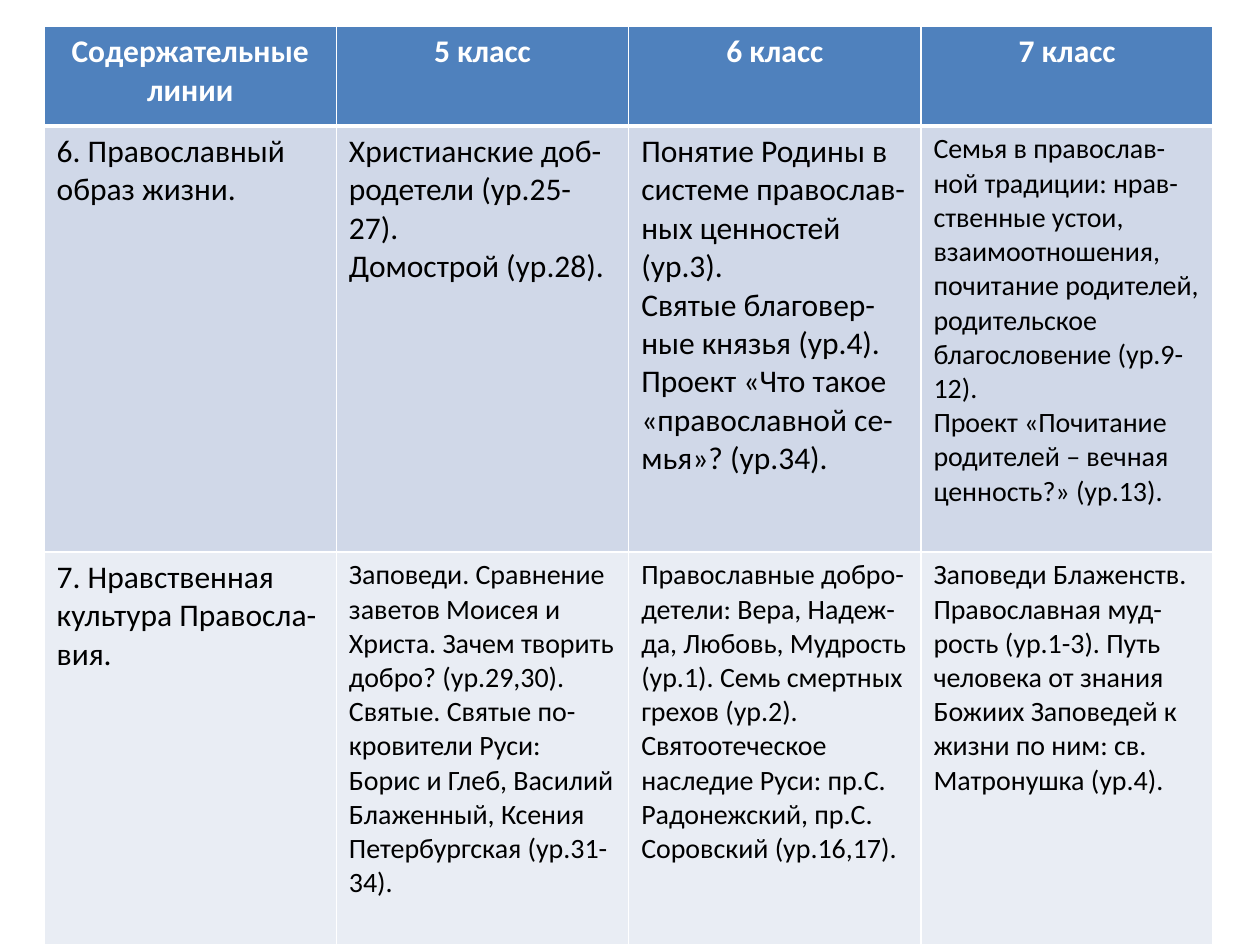
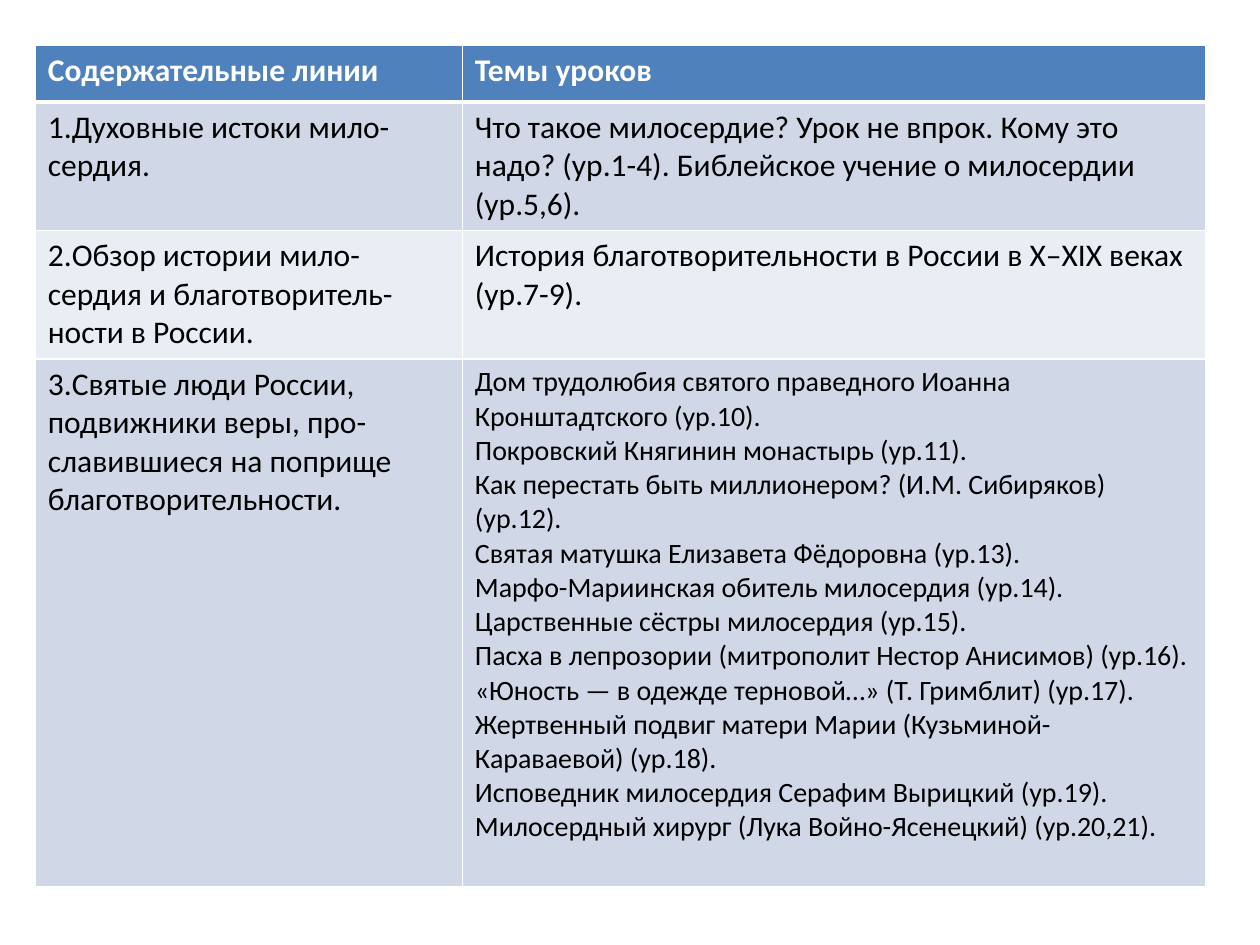
from lxml.etree import SubElement
from pptx import Presentation
from pptx.dml.color import RGBColor
from pptx.enum.text import PP_ALIGN
from pptx.oxml.ns import qn
from pptx.util import Inches, Pt

HEADER_FILL = "4F81BD"
BAND_FILLS = ["D0D8E8", "E9EDF4"]
WHITE = "FFFFFF"
BLACK = "000000"


def color(hex_text):
    return RGBColor.from_string(hex_text)


def add_border(cell, side, points):
    line = SubElement(cell._tc.get_or_add_tcPr(), qn(f"a:{side}"), w=str(Pt(points)))
    fill = SubElement(line, qn("a:solidFill"))
    SubElement(fill, qn("a:srgbClr"), val=WHITE)


tables = [
    {
        "left": 0.35, "top": 0.21,
        "columns": [2.32] * 4,
        "heights": [0.79, 3.38, 3.12],
        "header_alignment": PP_ALIGN.CENTER,
        "small_cells": [(1, 3), (2, 1), (2, 2), (2, 3)],
        "rows": [
            [["Содержательные линии"], ["5 класс"], ["6 класс"], ["7 класс"]],
            [
                ["6. Православный образ жизни."],
                ["Христианские доб-родетели (ур.25-27).", "Домострой (ур.28)."],
                [
                    "Понятие Родины в системе православ-ных ценностей (ур.3).",
                    "Святые благовер-ные князья (ур.4).",
                    "Проект «Что такое «православной се-мья»? (ур.34).",
                ],
                [
                    "Семья в православ-ной традиции: нрав-ственные устои, взаимоотношения, "
                    "почитание родителей, родительское благословение (ур.9-12).",
                    "Проект «Почитание родителей – вечная ценность?» (ур.13).",
                ],
            ],
            [
                ["7. Нравственная культура Правосла-вия."],
                [
                    "Заповеди. Сравнение заветов Моисея и Христа. Зачем творить добро? (ур.29,30).",
                    "Святые. Святые по-кровители Руси: Борис и Глеб, Василий Блаженный, "
                    "Ксения Петербургская (ур.31-34).",
                ],
                [
                    "Православные добро-детели: Вера, Надеж-да, Любовь, Мудрость (ур.1). "
                    "Семь смертных грехов (ур.2).",
                    "Святоотеческое наследие Руси: пр.С. Радонежский, пр.С. Соровский (ур.16,17).",
                ],
                [
                    "Заповеди Блаженств. Православная муд-рость (ур.1-3). Путь человека от знания "
                    "Божиих Заповедей к жизни по ним: св. Матронушка (ур.4).",
                ],
            ],
        ],
    },
    {
        "left": 0.28, "top": 0.36,
        "columns": [3.39, 5.9],
        "heights": [0.45, 1.02, 1.02, 4.19],
        "header_alignment": PP_ALIGN.LEFT,
        "small_cells": [(3, 1)],
        "rows": [
            [["Содержательные линии"], ["Темы уроков"]],
            [
                ["1.Духовные истоки мило-сердия."],
                [
                    "Что такое милосердие? Урок не впрок. Кому это надо? (ур.1-4). "
                    "Библейское учение о милосердии (ур.5,6).",
                ],
            ],
            [
                ["2.Обзор истории мило-сердия и благотворитель-ности в России."],
                ["История благотворительности в России в X–XIX веках (ур.7-9)."],
            ],
            [
                ["3.Святые люди России, подвижники веры, про-славившиеся на поприще благотворительности."],
                [
                    "Дом трудолюбия святого праведного Иоанна Кронштадтского (ур.10).",
                    "Покровский Княгинин монастырь (ур.11).",
                    "Как перестать быть миллионером? (И.М. Сибиряков) (ур.12).",
                    "Святая матушка Елизавета Фёдоровна (ур.13).",
                    "Марфо-Мариинская обитель милосердия (ур.14).",
                    "Царственные сёстры милосердия (ур.15).",
                    "Пасха в лепрозории (митрополит Нестор Анисимов) (ур.16).",
                    "«Юность — в одежде терновой…» (Т. Гримблит) (ур.17).",
                    "Жертвенный подвиг матери Марии (Кузьминой-Караваевой) (ур.18).",
                    "Исповедник милосердия Серафим Вырицкий (ур.19).",
                    "Милосердный хирург (Лука Войно-Ясенецкий) (ур.20,21).",
                ],
            ],
        ],
    },
]

deck = Presentation()
deck.slide_width = Inches(10)
deck.slide_height = Inches(7.5)

for content in tables:
    page = deck.slides.add_slide(deck.slide_layouts[6])
    columns, heights = content["columns"], content["heights"]
    table = page.shapes.add_table(
        len(heights), len(columns),
        Inches(content["left"]), Inches(content["top"]),
        Inches(sum(columns)), Inches(sum(heights)),
    ).table
    for column, width in zip(table.columns, columns):
        column.width = Inches(width)
    for row, height in zip(table.rows, heights):
        row.height = Inches(height)

    for row_index, row in enumerate(content["rows"]):
        is_header = row_index == 0
        for column_index, lines in enumerate(row):
            cell = table.cell(row_index, column_index)
            cell.text = "\n".join(lines)
            for side in ("lnL", "lnR", "lnT", "lnB"):
                under_header = (row_index, side) in [(0, "lnB"), (1, "lnT")]
                add_border(cell, side, 3 if under_header else 1)
            cell.fill.solid()
            cell.fill.fore_color.rgb = color(HEADER_FILL if is_header else BAND_FILLS[(row_index - 1) % 2])
            is_small = (row_index, column_index) in content["small_cells"]
            for para in cell.text_frame.paragraphs:
                para.alignment = content["header_alignment"] if is_header else PP_ALIGN.LEFT
                para.font.name = "Calibri"
                para.font.size = Pt(16 if is_small else 18)
                para.font.bold = is_header
                para.font.color.rgb = color(WHITE if is_header else BLACK)

deck.save("out.pptx")
